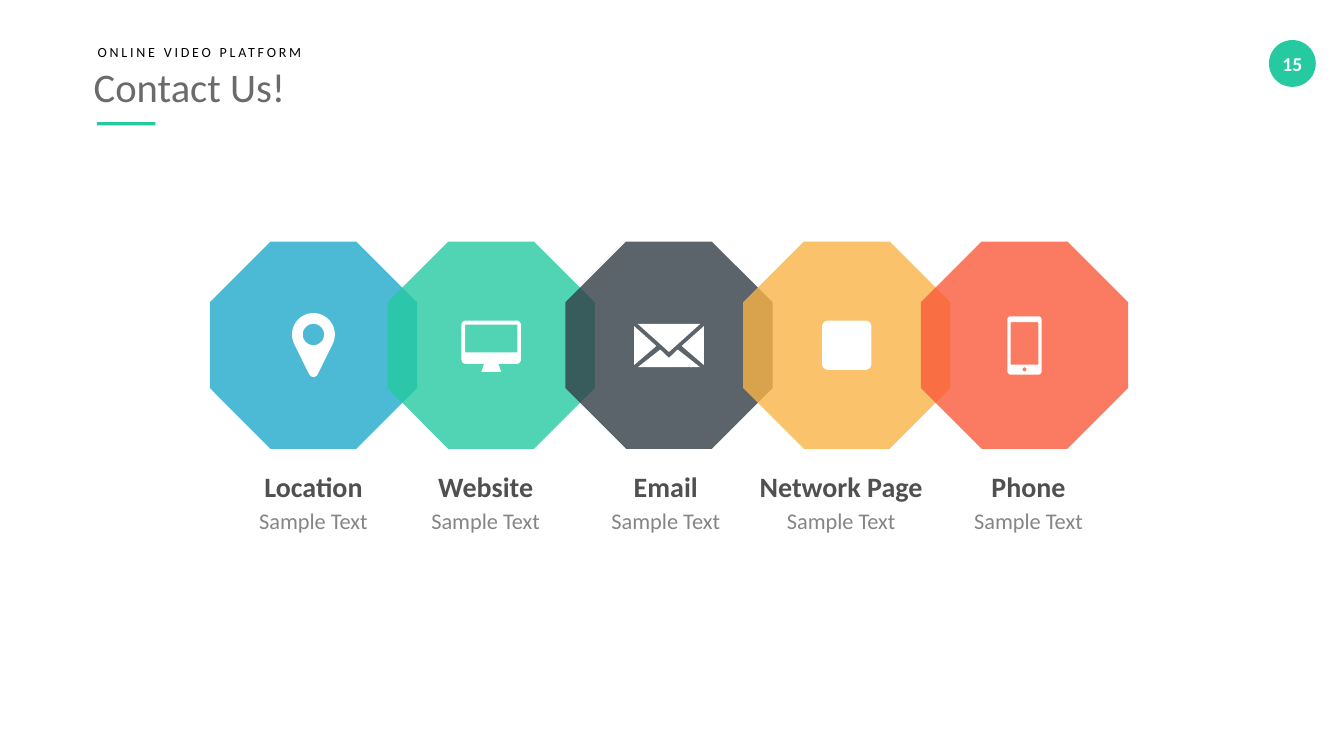
import math
from dataclasses import dataclass

import pptx
import pptx.dml.color
import pptx.enum.shapes
import pptx.enum.text
import pptx.oxml
import pptx.oxml.ns
import pptx.util

Cm = pptx.util.Cm
MSO = pptx.enum.shapes.MSO_SHAPE
ALIGN = pptx.enum.text.PP_ALIGN
ANCHOR = pptx.enum.text.MSO_ANCHOR


@dataclass(frozen=True)
class Theme:
    font: str = "Calibri"
    accent: str = "25CAA0"
    white: str = "FFFFFF"
    black: str = "000000"
    title: str = "6B6B6B"
    heading: str = "505050"
    body: str = "858586"
    octagons: tuple = ("20A9CA", "25CAA0", "333D47", "F9B347", "F95B3A")
    title_size: int = 29
    heading_size: int = 20
    body_size: int = 16
    number_size: int = 14
    kicker_size: int = 10


def rgb(color):
    return pptx.dml.color.RGBColor.from_string(color)


def write(tf, text, *, font, size, color, bold=False, align=ALIGN.LEFT,
          anchor=ANCHOR.TOP, wrap=True, inset=None, spacing=None):
    """Fill a text frame with one formatted run; spacing is in points."""
    tf.auto_size = pptx.enum.text.MSO_AUTO_SIZE.NONE
    tf.word_wrap = wrap
    tf.vertical_anchor = anchor
    if inset is not None:
        tf.margin_left = tf.margin_top = tf.margin_right = tf.margin_bottom = Cm(inset)
    p = tf.paragraphs[0]
    p.alignment = align
    r = p.add_run()
    r.text = text
    r.font.name = font
    r.font.size = pptx.util.Pt(size)
    r.font.bold = bold
    r.font.color.rgb = rgb(color)
    if spacing:
        r.font._element.set("spc", str(spacing * 100))


def arc(x, y, radius, start, end, steps=8):
    """Points along an arc, in degrees clockwise from the right."""
    angles = [math.radians(start + (end - start) * i / steps) for i in range(steps + 1)]
    return [(x + radius * math.cos(a), y + radius * math.sin(a)) for a in angles]


def circle(x, y, radius):
    return arc(x, y, radius, 0, 360, 32)


def box(left, top, right, bottom, radius=0.02):
    """Outline of a rounded rectangle."""
    corners = ((right, bottom), (left, bottom), (left, top), (right, top))
    points = []
    for i, (x, y) in enumerate(corners):
        cx = x - radius if x == right else x + radius
        cy = y - radius if y == bottom else y + radius
        points += arc(cx, cy, radius, 90 * i, 90 * i + 90)
    return points


def mirror(points):
    return [(-x, y) for x, y in points]


# Icon outlines in cm, measured from the centre of their octagon
PIN = [arc(0, -0.27, 0.54, 155, 385, 32) + arc(0, 0.68, 0.12, 25, 155),
       circle(0, -0.27, 0.27)]
MONITOR = [box(-0.75, -0.62, 0.75, 0.47, 0.11),
           box(-0.66, -0.52, 0.66, 0.18),
           [(-0.18, 0.47), (0.18, 0.47), (0.25, 0.67), (-0.25, 0.67)]]
ENVELOPE_SIDE = [(-0.88, -0.48), (-0.32, 0.02), (-0.88, 0.5)]
ENVELOPE = [[(-0.79, -0.54), (0.79, -0.54), (0, 0.17)],
            ENVELOPE_SIDE, mirror(ENVELOPE_SIDE),
            [(0, 0.32), (-0.22, 0.11), (-0.78, 0.55), (0.78, 0.55), (0.22, 0.11)]]
PAGE = [box(-0.62, -0.62, 0.62, 0.62, 0.15)]
PHONE = [box(-0.43, -0.73, 0.43, 0.74, 0.08),
         box(-0.35, -0.58, 0.35, 0.49),
         circle(0, 0.61, 0.05)]

# Label, centre of the label, icon
CONTACTS = (
    ("Location", 7.9, PIN),
    ("Website", 12.24, MONITOR),
    ("Email", 16.78, ENVELOPE),
    ("Network Page", 21.2, PAGE),
    ("Phone", 25.92, PHONE),
)
OCTAGON_LEFT, OCTAGON_TOP, OCTAGON_SIZE, OCTAGON_PITCH = 5.29, 6.09, 5.22, 4.48


class Deck:
    def __init__(self, theme):
        self.theme = theme
        self.prs = pptx.Presentation()
        self.prs.slide_width, self.prs.slide_height = Cm(33.87), Cm(19.05)
        self.s = None

    def add_slide(self):
        self.s = self.prs.slides.add_slide(self.prs.slide_layouts[5])

    def paint(self, sp, color, opacity=None):
        sp.shadow.inherit = False
        sp.line.fill.background()
        sp.fill.solid()
        sp.fill.fore_color.rgb = rgb(color)
        if opacity:
            clr = sp._element.spPr.find(".//" + pptx.oxml.ns.qn("a:srgbClr"))
            alpha = pptx.oxml.parse_xml(
                f'<a:alpha {pptx.oxml.ns.nsdecls("a")} val="{opacity * 1000}"/>')
            clr.append(alpha)

    def title(self, text, left, top, width, height):
        sp = self.s.shapes.title
        sp.left, sp.top, sp.width, sp.height = map(Cm, (left, top, width, height))
        write(sp.text_frame, text, font=self.theme.font, size=self.theme.title_size,
              color=self.theme.title, anchor=ANCHOR.MIDDLE, wrap=False, inset=0)

    def text(self, text, left, top, width, height, **fmt):
        sp = self.s.shapes.add_textbox(*map(Cm, (left, top, width, height)))
        write(sp.text_frame, text, font=self.theme.font, **fmt)

    def shape(self, kind, left, top, width, height, color, opacity=None):
        sp = self.s.shapes.add_shape(kind, *map(Cm, (left, top, width, height)))
        self.paint(sp, color, opacity)
        return sp

    def icon(self, outlines, x, y):
        """Draw outlines as one shape centred on x, y; inner outlines are holes."""
        fb = None
        for outline in outlines:
            start, *rest = [(Cm(x + dx), Cm(y + dy)) for dx, dy in outline]
            if fb is None:
                fb = self.s.shapes.build_freeform(*start)
            else:
                fb.move_to(*start)
            fb.add_line_segments(rest, close=True)
        self.paint(fb.convert_to_shape(), self.theme.white)

    def page_number(self, number):
        sp = self.shape(MSO.OVAL, 31.98, 1.01, 1.18, 1.18, self.theme.accent)
        write(sp.text_frame, number, font=self.theme.font, size=self.theme.number_size,
              color=self.theme.white, bold=True, align=ALIGN.CENTER,
              anchor=ANCHOR.MIDDLE, wrap=False, inset=0)

    def label(self, heading, detail, center):
        t = self.theme
        self.text(heading, center - 2.43, 11.71, 4.86, 1.12, size=t.heading_size,
                  color=t.heading, bold=True, align=ALIGN.CENTER)
        self.text(detail, center - 2.73, 12.65, 5.46, 0.94, size=t.body_size,
                  color=t.body, align=ALIGN.CENTER)


def main():
    theme = Theme()
    deck = Deck(theme)
    deck.add_slide()
    deck.page_number("15")
    deck.title("Contact Us!", 2.36, 1.55, 4.9, 1.24)
    deck.text("ONLINE VIDEO PLATFORM", 2.46, 1.1, 5.28, 0.43, size=theme.kicker_size,
              color=theme.black, anchor=ANCHOR.MIDDLE, wrap=False, inset=0, spacing=2)
    deck.shape(MSO.RECTANGLE, 2.44, 3.08, 1.48, 0.08, theme.accent)

    lefts = [OCTAGON_LEFT + i * OCTAGON_PITCH for i in range(len(CONTACTS))]
    for left, color in zip(lefts, theme.octagons):
        deck.shape(MSO.OCTAGON, left, OCTAGON_TOP, OCTAGON_SIZE, OCTAGON_SIZE,
                   color, opacity=80)
    for left, (heading, center, outlines) in zip(lefts, CONTACTS):
        half = OCTAGON_SIZE / 2
        deck.icon(outlines, left + half, OCTAGON_TOP + half)
        deck.label(heading, "Sample Text", center)
    deck.prs.save("out.pptx")


if __name__ == "__main__":
    main()
